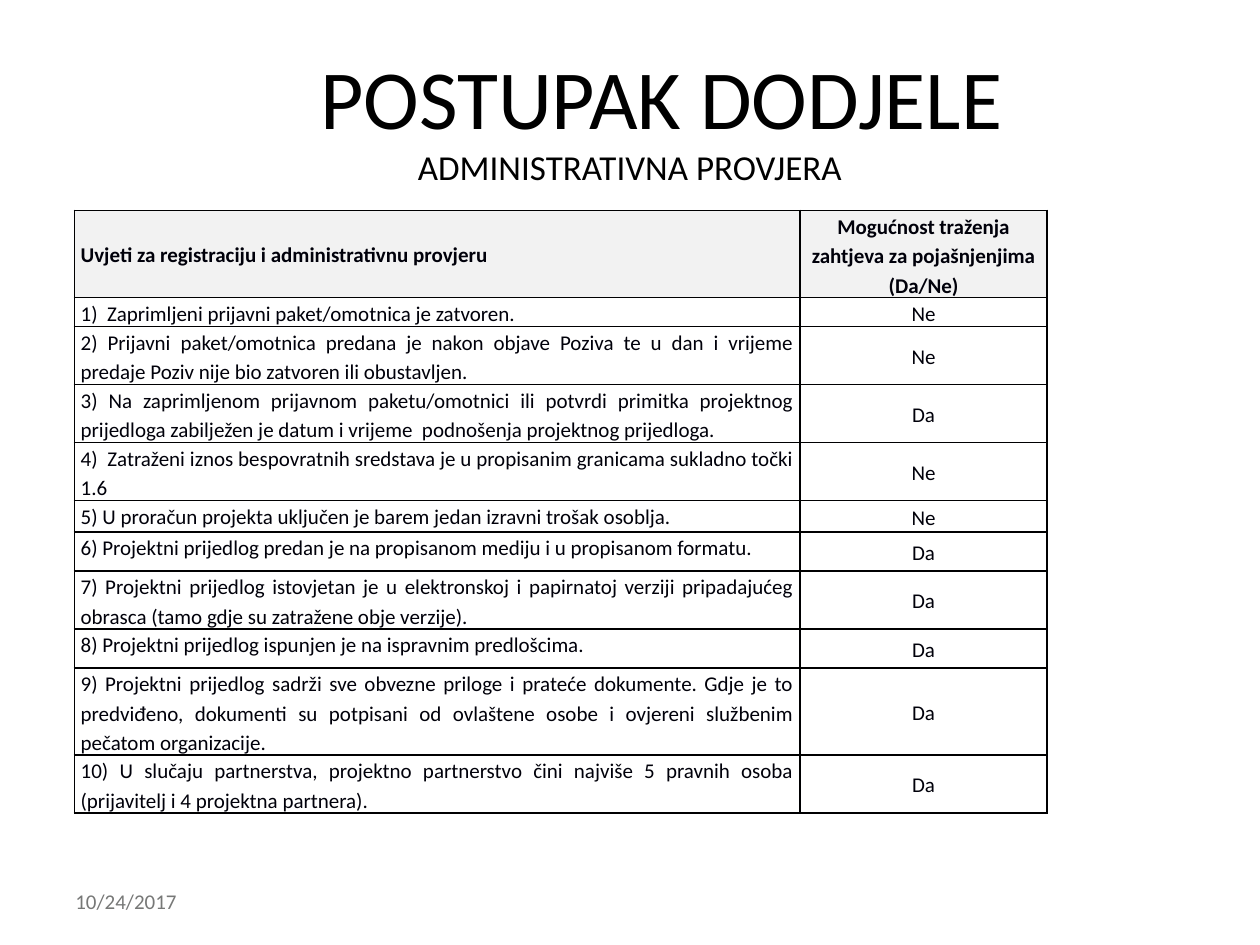
from typing import NamedTuple

from lxml.etree import SubElement
from pptx import Presentation
from pptx.dml.color import RGBColor
from pptx.enum.text import MSO_ANCHOR, MSO_AUTO_SIZE, PP_ALIGN
from pptx.oxml.ns import qn
from pptx.util import Inches, Pt

BLACK = RGBColor(0x00, 0x00, 0x00)
INK = RGBColor(0x00, 0x00, 0x0A)
BORDER = RGBColor(0x00, 0x00, 0x01)
GRAY = RGBColor(0x77, 0x78, 0x77)
HEADER_FILL = RGBColor(0xF2, 0xF2, 0xF2)
WHITE = RGBColor(0xFF, 0xFF, 0xFF)
FONT = "Calibri"


class Check(NamedTuple):
    condition: str
    answer: str
    height: float


HEADER = Check("Uvjeti za registraciju i administrativnu provjeru",
               "Mogućnost traženja zahtjeva za pojašnjenjima (Da/Ne)", 0.58)
CHECKS = [
    Check("1)  Zaprimljeni prijavni paket/omotnica je zatvoren.", "Ne", 0.22),
    Check("2) Prijavni paket/omotnica predana je nakon objave Poziva te u dan i "
          "vrijeme predaje Poziv nije bio zatvoren ili obustavljen.", "Ne", 0.46),
    Check("3) Na zaprimljenom prijavnom paketu/omotnici ili potvrdi primitka "
          "projektnog prijedloga zabilježen je datum i vrijeme  podnošenja "
          "projektnog prijedloga.", "Da", 0.46),
    Check("4)  Zatraženi iznos bespovratnih sredstava je u propisanim granicama "
          "sukladno točki 1.6", "Ne", 0.31),
    Check("5) U proračun projekta uključen je barem jedan izravni trošak osoblja.",
          "Ne", 0.25),
    Check("6) Projektni prijedlog predan je na propisanom mediju i u propisanom "
          "formatu.", "Da", 0.31),
    Check("7) Projektni prijedlog istovjetan je u elektronskoj i papirnatoj verziji "
          "pripadajućeg obrasca (tamo gdje su zatražene obje verzije).", "Da", 0.46),
    Check("8) Projektni prijedlog ispunjen je na ispravnim predlošcima.", "Da", 0.31),
    Check("9) Projektni prijedlog sadrži sve obvezne priloge i prateće dokumente. "
          "Gdje je to predviđeno, dokumenti su potpisani od ovlaštene osobe i "
          "ovjereni službenim pečatom organizacije.", "Da", 0.61),
    Check("10) U slučaju partnerstva, projektno partnerstvo čini najviše 5 pravnih "
          "osoba (prijavitelj i 4 projektna partnera).", "Da", 0.46),
]


def add_text(p, text: str, *, size=12, color=INK, bold=False,
             align=PP_ALIGN.LEFT, spacing=None) -> None:
    p.alignment = align
    if spacing:
        p.line_spacing = spacing
    r = p.add_run()
    r.text = text
    r.font.name = FONT
    r.font.size = Pt(size)
    r.font.bold = bold
    r.font.color.rgb = color


def set_borders(cell, color: RGBColor, width: float) -> None:
    tc_pr = cell._tc.get_or_add_tcPr()
    for i, side in enumerate(("lnL", "lnR", "lnT", "lnB")):
        ln = SubElement(tc_pr, qn(f"a:{side}"), w=str(Pt(width)))
        fill = SubElement(ln, qn("a:solidFill"))
        SubElement(fill, qn("a:srgbClr"), val=str(color))
        tc_pr.remove(ln)
        tc_pr.insert(i, ln)


def fill_cell(cell, text: str, *, fill: RGBColor, anchor, **fmt) -> None:
    cell.margin_left = cell.margin_right = Inches(0.05)
    cell.margin_top = cell.margin_bottom = 0
    cell.vertical_anchor = anchor
    cell.fill.solid()
    cell.fill.fore_color.rgb = fill
    set_borders(cell, BORDER, 1)
    add_text(cell.text_frame.paragraphs[0], text, spacing=1.15, **fmt)


def add_title(s) -> None:
    title = s.shapes.title
    title.left, title.top = Inches(0.5), Inches(0.3)
    title.width, title.height = Inches(9), Inches(1.25)
    tf = title.text_frame
    tf.word_wrap = True
    tf.auto_size = MSO_AUTO_SIZE.NONE
    tf.vertical_anchor = MSO_ANCHOR.MIDDLE
    p = tf.paragraphs[0]
    add_text(p, "\tPOSTUPAK DODJELE", size=48, color=BLACK, align=PP_ALIGN.CENTER)
    p.add_line_break()
    add_text(p, "ADMINISTRATIVNA PROVJERA", size=20, color=BLACK,
             align=PP_ALIGN.CENTER)


def add_checks(s) -> None:
    rows = [HEADER, *CHECKS]
    frame = s.shapes.add_table(len(rows), 2, Inches(0.59), Inches(1.67),
                               Inches(7.72), Inches(sum(c.height for c in rows)))
    table = frame.table
    for column, width in zip(table.columns, (5.76, 1.96)):
        column.width = Inches(width)
    for i, check in enumerate(rows):
        is_header = i == 0
        table.rows[i].height = Inches(check.height)
        fill = HEADER_FILL if is_header else WHITE
        fill_cell(table.cell(i, 0), check.condition, fill=fill, bold=is_header,
                  anchor=MSO_ANCHOR.MIDDLE if is_header else MSO_ANCHOR.TOP,
                  align=PP_ALIGN.JUSTIFY)
        fill_cell(table.cell(i, 1), check.answer, fill=fill, bold=is_header,
                  anchor=MSO_ANCHOR.MIDDLE, align=PP_ALIGN.CENTER)


def add_date(s) -> None:
    sp = s.shapes.add_textbox(Inches(0.5), Inches(6.95), Inches(2.33), Inches(0.4))
    tf = sp.text_frame
    tf.word_wrap = True
    tf.vertical_anchor = MSO_ANCHOR.MIDDLE
    add_text(tf.paragraphs[0], "10/24/2017", color=GRAY)


def main() -> None:
    prs = Presentation()
    prs.slide_width, prs.slide_height = Inches(10), Inches(7.5)
    s = prs.slides.add_slide(prs.slide_layouts[5])
    add_date(s)
    add_title(s)
    add_checks(s)
    prs.save("out.pptx")


if __name__ == "__main__":
    main()
